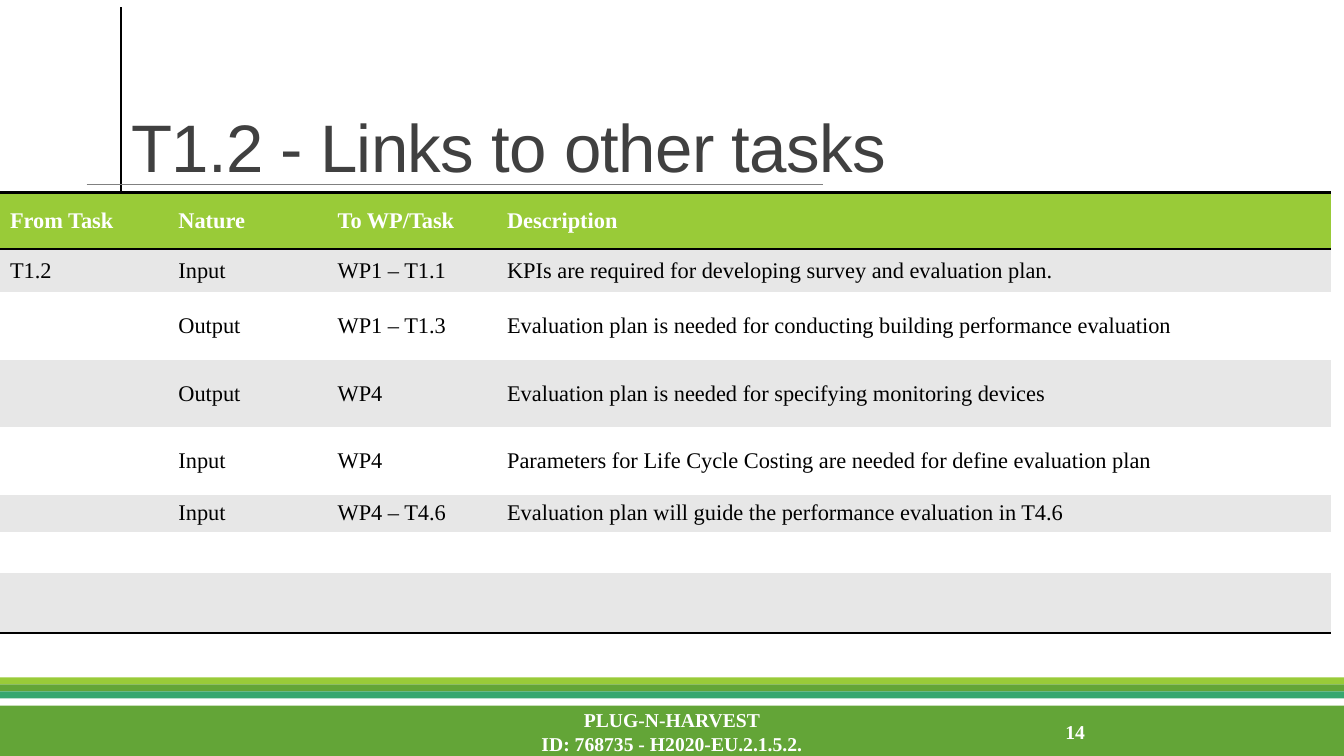
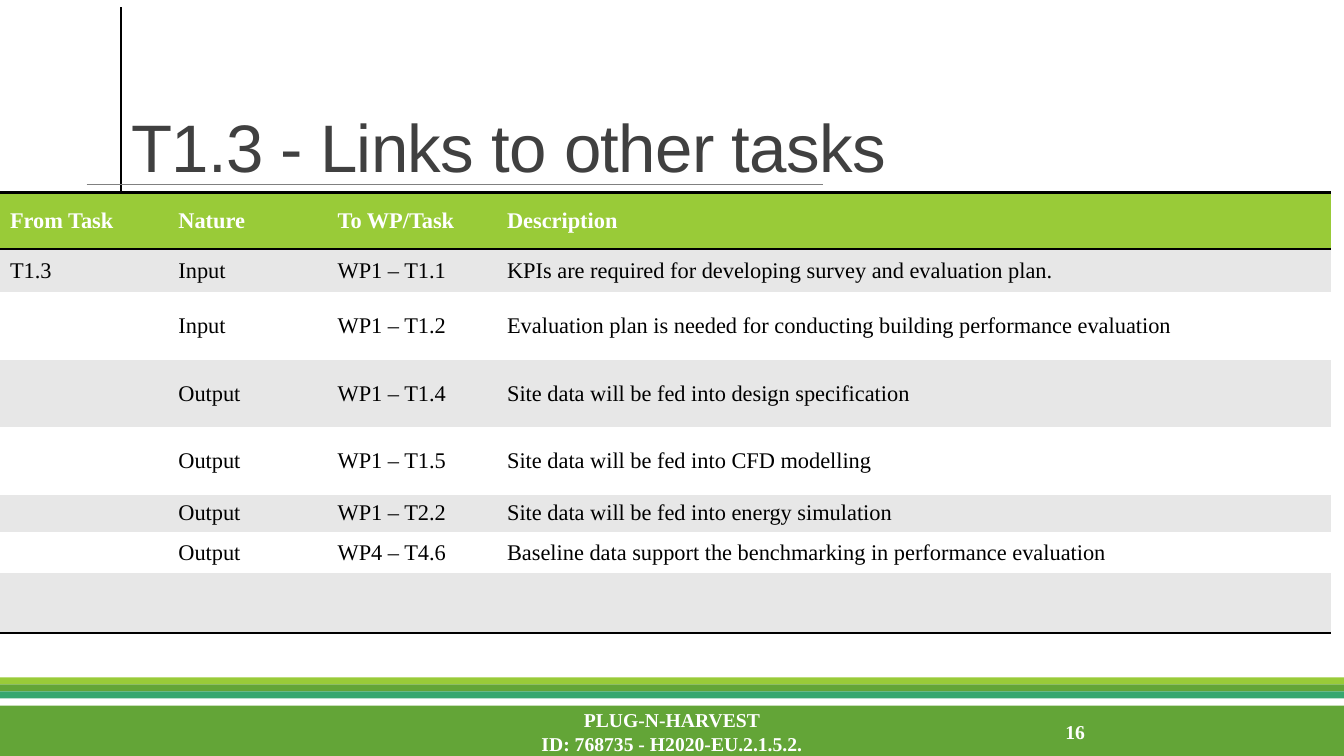
"""Build two slides that list the links from a project task to other tasks."""
from lxml.etree import SubElement
from pptx import Presentation
from pptx.dml.color import RGBColor
from pptx.enum.shapes import MSO_CONNECTOR, MSO_SHAPE
from pptx.enum.text import MSO_ANCHOR, MSO_AUTO_SIZE, PP_ALIGN
from pptx.oxml import parse_xml
from pptx.oxml.ns import nsdecls, qn
from pptx.util import Inches, Pt

LIME = RGBColor(0x99, 0xCB, 0x38)
GREEN = RGBColor(0x63, 0xA5, 0x37)
TEAL = RGBColor(0x37, 0xA7, 0x6F)
BLACK = RGBColor(0, 0, 0)
WHITE = RGBColor(0xFF, 0xFF, 0xFF)
CHARCOAL = RGBColor(0x40, 0x40, 0x40)
GREY = RGBColor(0x80, 0x80, 0x80)
STRIPE = RGBColor(0xE7, 0xE7, 0xE7)

HEADER = ("From Task", "Nature", "To WP/Task", "Description")
SURVEY = ("Input", "WP1 – T1.1",
          "KPIs are required for developing survey and evaluation plan.")
CONDUCTING = "Evaluation plan is needed for conducting building performance evaluation"
TASKS = [
    {"task": "T1.2", "page": "14", "links": [
        SURVEY,
        ("Output", "WP1 – T1.3", CONDUCTING),
        ("Output", "WP4", "Evaluation plan is needed for specifying monitoring devices"),
        ("Input", "WP4",
         "Parameters for Life Cycle Costing are needed for define evaluation plan"),
        ("Input", "WP4 – T4.6",
         "Evaluation plan will guide the performance evaluation in T4.6"),
    ]},
    {"task": "T1.3", "page": "16", "links": [
        SURVEY,
        ("Input", "WP1 – T1.2", CONDUCTING),
        ("Output", "WP1 – T1.4", "Site data will be fed into design specification"),
        ("Output", "WP1 – T1.5", "Site data will be fed into CFD modelling"),
        ("Output", "WP1 – T2.2", "Site data will be fed into energy simulation"),
        ("Output", "WP4 – T4.6",
         "Baseline data support the benchmarking in performance evaluation"),
    ]},
]
FOOTER = "PLUG-N-HARVEST\nID: 768735 - H2020-EU.2.1.5.2."

SLIDE_WIDTH, SLIDE_HEIGHT = 13.33, 7.5
TABLE_TOP = 1.91
COLUMNS = (1.67, 1.58, 1.68, 8.27)
ROWS = (0.56, 0.43, 0.67, 0.67, 0.67, 0.37, 0.41, 0.59)
BAND_TOP, BAND_HEIGHT, FOOTER_HEIGHT = 6.72, 0.07, 0.5
FOOTER_TOP = SLIDE_HEIGHT - FOOTER_HEIGHT
BANDS = [(BAND_TOP + step * BAND_HEIGHT, BAND_HEIGHT, colour)
         for step, colour in enumerate((LIME, GREEN, TEAL))]
BANDS.append((FOOTER_TOP, FOOTER_HEIGHT, GREEN))
RULES = [((1.2, 0.07, 1.2, TABLE_TOP), BLACK, 1), ((0.86, 1.83, 8.16, 1.83), GREY, 0.5)]
NO_STYLE = "{2D5ABB26-0587-4C30-8999-92F81FD0307C}"

TITLE_FONT = {"name": "Arial", "size": Pt(48)}
FOOTER_FONT = {"name": "Times New Roman", "size": Pt(14), "bold": True}
HEADER_FONT = {"name": "Times New Roman", "size": Pt(16), "bold": True}
BODY_FONT = {**HEADER_FONT, "bold": False}


def assign(target, values):
    for attribute, value in values.items():
        setattr(target, attribute, value)


def write(paragraph, text, font, colour):
    paragraph.text = text
    for run in paragraph.runs:
        assign(run.font, font)
        run.font.color.rgb = colour


def decorate_layout(layout, slide):
    """Draw the shared bands and rules once and move them to the layout."""
    for top, height, colour in BANDS:
        band = slide.shapes.add_shape(MSO_SHAPE.RECTANGLE, 0, Inches(top),
                                      Inches(SLIDE_WIDTH), Inches(height))
        band.shadow.inherit = False
        band.fill.solid()
        band.fill.fore_color.rgb = colour
        band.line.fill.background()
        layout.shapes.element.append(band.element)
    for ends, colour, width in RULES:
        rule = slide.shapes.add_connector(MSO_CONNECTOR.STRAIGHT, *map(Inches, ends))
        rule.line.color.rgb = colour
        rule.line.width = Pt(width)
        SubElement(rule.element.spPr, qn("a:effectLst"))
        layout.shapes.element.append(rule.element)
    assign(layout.placeholders[0], {"left": Inches(1.2), "top": Inches(0.31),
                                    "width": Inches(11), "height": Inches(1.59)})


def add_title(slide, text):
    frame = slide.shapes.title.text_frame
    assign(frame, {"vertical_anchor": MSO_ANCHOR.BOTTOM, "word_wrap": True,
                   "auto_size": MSO_AUTO_SIZE.NONE})
    heading = frame.paragraphs[0]
    write(heading, text, TITLE_FONT, CHARCOAL)
    assign(heading, {"alignment": PP_ALIGN.LEFT, "line_spacing": 0.85})
    heading.runs[0].font._element.set("spc", "-50")


def add_footer(slide, left, width, text, alignment):
    footer = slide.shapes.add_textbox(Inches(left), Inches(FOOTER_TOP + 0.06),
                                      Inches(width), Inches(0.4))
    frame = footer.text_frame
    assign(frame, {"word_wrap": True, "vertical_anchor": MSO_ANCHOR.MIDDLE})
    write(frame.paragraphs[0], text, FOOTER_FONT, WHITE)
    frame.paragraphs[0].alignment = alignment


def add_border(cell, side):
    cell._tc.get_or_add_tcPr().append(parse_xml(
        f'<a:{side} {nsdecls("a")} w="{Pt(2)}"><a:solidFill>'
        f'<a:srgbClr val="{BLACK}"/></a:solidFill></a:{side}>'))


def add_links(slide, task, links):
    frame = slide.shapes.add_table(len(ROWS), len(COLUMNS), 0, Inches(TABLE_TOP),
                                   Inches(sum(COLUMNS)), Inches(sum(ROWS)))
    frame.element.find(".//" + qn("a:tableStyleId")).text = NO_STYLE
    table = frame.table
    table.horz_banding = False
    for column, width in zip(table.columns, COLUMNS):
        column.width = Inches(width)
    lines = [HEADER] + [("" if index else task, *link) for index, link in enumerate(links)]
    lines += [("",) * len(COLUMNS)] * (len(ROWS) - len(lines))
    for index, (height, line) in enumerate(zip(ROWS, lines)):
        table.rows[index].height = Inches(height)
        is_header = index == 0
        font, colour = (HEADER_FONT, WHITE) if is_header else (BODY_FONT, BLACK)
        for cell, text in zip(table.rows[index].cells, line):
            assign(cell, {"vertical_anchor": MSO_ANCHOR.MIDDLE,
                          "margin_top": Inches(0.03), "margin_bottom": Inches(0.03)})
            if is_header:
                add_border(cell, "lnT")
            if is_header or index == len(ROWS) - 1:
                add_border(cell, "lnB")
            cell.fill.solid()
            cell.fill.fore_color.rgb = LIME if is_header else STRIPE if index % 2 else WHITE
            if text:
                write(cell.text_frame.paragraphs[0], text, font, colour)


def main():
    deck = Presentation()
    deck.slide_width, deck.slide_height = Inches(SLIDE_WIDTH), Inches(SLIDE_HEIGHT)
    layout = deck.slide_layouts[5]
    slides = [deck.slides.add_slide(layout) for _ in TASKS]
    decorate_layout(layout, slides[0])
    for slide, content in zip(slides, TASKS):
        add_title(slide, f"{content['task']} - Links to other tasks")
        add_links(slide, content["task"], content["links"])
        add_footer(slide, 4.03, 5.27, FOOTER, PP_ALIGN.CENTER)
        add_footer(slide, 9.43, 1.43, content["page"], PP_ALIGN.RIGHT)
    deck.save("out.pptx")


if __name__ == "__main__":
    main()
